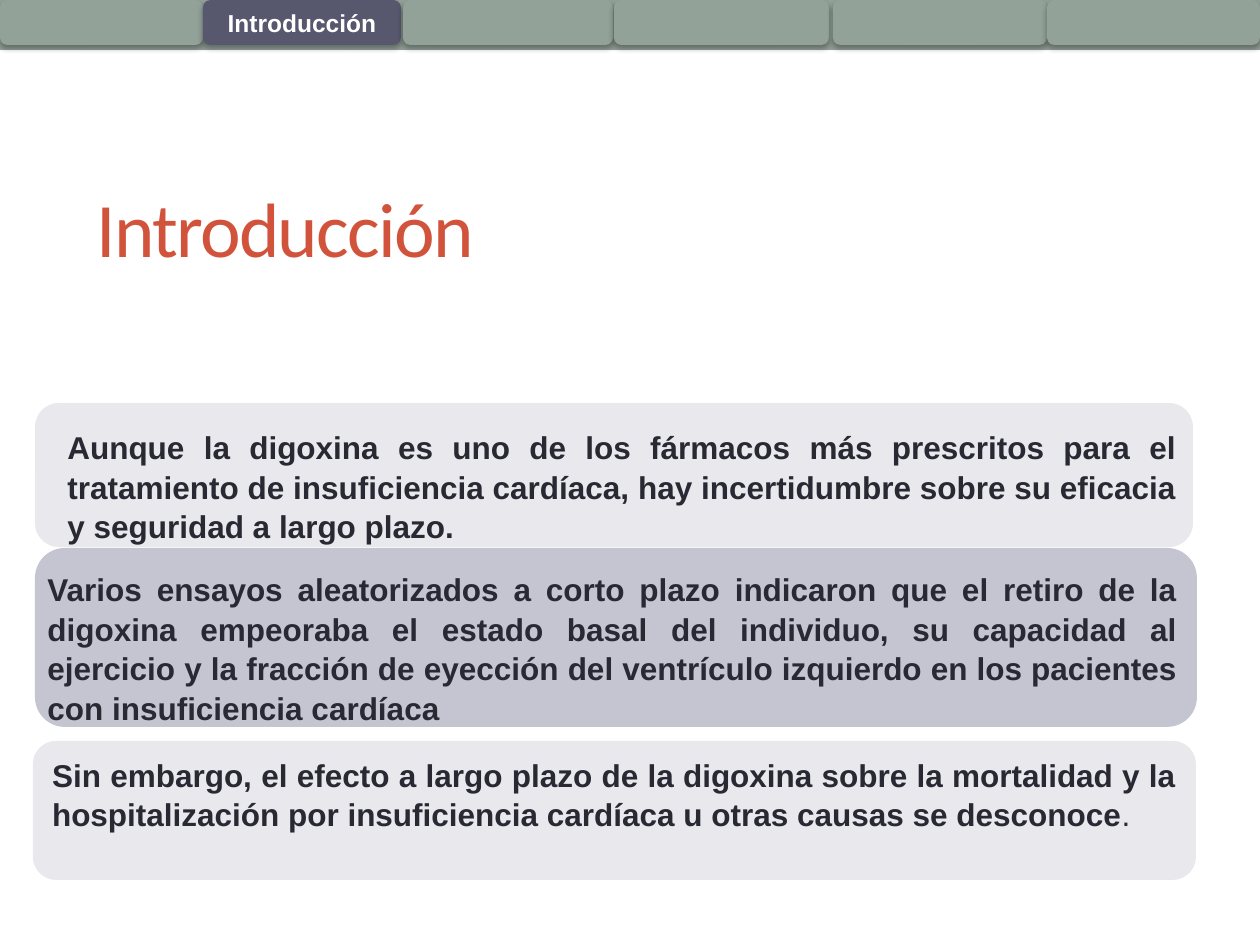
"""Build the introduction slide: a tab bar, a title and three statement cards."""
from lxml.etree import SubElement
from pptx import Presentation
from pptx.dml.color import RGBColor
from pptx.enum.shapes import MSO_SHAPE as SHAPE
from pptx.enum.text import MSO_ANCHOR as ANCHOR, PP_ALIGN as ALIGN
from pptx.oxml.ns import qn
from pptx.util import Emu, Pt

PX = 914400 // 126
WIDTH, HEIGHT = 1260, 945
SAGE, SLATE, LILAC, MIST = "93A299", "57576E", "C5C5D1", "E8E8ED"
INK, CORAL, WHITE = "292934", "D2533C", "FFFFFF"

HEADING = "Introducción"
TITLE_BOX = (84, 159, 577, 136)
BAND_HEIGHT, TAB_HEIGHT = 50, 45
TABS = [
    (0, 203, ""),
    (203, 198, HEADING),
    (403, 210, ""),
    (614, 215, ""),
    (833, 214, ""),
    (1047, 213, ""),
]
CARDS = [
    {"box": (35, 403, 1158, 144), "fill": MIST, "text_box": (55, 420, 1134, 127),
     "runs": [("Aunque la digoxina es uno de los fármacos más prescritos para el "
               "tratamiento de insuficiencia cardíaca, hay incertidumbre sobre su "
               "eficacia y seguridad a largo plazo.", True)]},
    {"box": (35, 548, 1162, 179), "fill": LILAC, "text_box": (35, 562, 1155, 165),
     "runs": [("Varios ensayos aleatorizados a corto plazo indicaron que el retiro "
               "de la digoxina empeoraba el estado basal del individuo, su capacidad "
               "al ejercicio y la fracción de eyección del ventrículo izquierdo en "
               "los pacientes con insuficiencia cardíaca", True)]},
    {"box": (33, 741, 1163, 139), "fill": MIST, "text_box": None,
     "runs": [("Sin embargo, el efecto a largo plazo de la digoxina sobre la "
               "mortalidad y la hospitalización por insuficiencia cardíaca u otras "
               "causas se desconoce", True), (".", False)]},
]


def rgb(value):
    return RGBColor.from_string(value)


def emu(box):
    return [Emu(length * PX) for length in box]


def add_panel(slide, kind, box, fill):
    panel = slide.shapes.add_shape(kind, *emu(box))
    panel.shadow.inherit = False
    panel.fill.solid()
    panel.fill.fore_color.rgb = rgb(fill)
    panel.line.fill.background()
    return panel


def add_shadow(panel):
    effects = panel.element.spPr.find(qn("a:effectLst"))
    shadow = SubElement(effects, qn("a:outerShdw"), blurRad=str(Pt(3.5)),
                        dist=str(Pt(2.2)), dir="5400000", rotWithShape="0")
    black = SubElement(shadow, qn("a:srgbClr"), val="000000")
    SubElement(black, qn("a:alpha"), val="32000")


def write(frame, runs, size, color, align, anchor, font="Arial", spacing=None):
    frame.word_wrap = True
    frame.vertical_anchor = anchor
    paragraph = frame.paragraphs[0]
    paragraph.alignment = align
    paragraph.line_spacing = spacing
    for words, bold in runs:
        run = paragraph.add_run()
        run.text = words
        run.font.name = font
        run.font.size = Pt(size)
        run.font.bold = bold
        run.font.color.rgb = rgb(color)
    return paragraph


def main():
    deck = Presentation()
    deck.slide_width, deck.slide_height = emu((WIDTH, HEIGHT))
    slide = deck.slides.add_slide(deck.slide_layouts[5])

    title = slide.shapes.title
    title.left, title.top, title.width, title.height = emu(TITLE_BOX)
    heading = write(title.text_frame, [(HEADING, False)], 44, CORAL,
                    ALIGN.LEFT, ANCHOR.MIDDLE, "Calibri")
    heading.runs[0].font._element.set("spc", "-100")

    add_panel(slide, SHAPE.RECTANGLE, (0, 0, WIDTH, BAND_HEIGHT), SAGE)
    for left, width, label in TABS:
        tab = add_panel(slide, SHAPE.ROUNDED_RECTANGLE,
                        (left, 0, width, TAB_HEIGHT), SLATE if label else SAGE)
        add_shadow(tab)
        if label:
            write(tab.text_frame, [(label, True)], 14, WHITE,
                  ALIGN.CENTER, ANCHOR.MIDDLE)

    for card in CARDS:
        holder = add_panel(slide, SHAPE.ROUNDED_RECTANGLE, card["box"], card["fill"])
        if card["text_box"]:
            holder = slide.shapes.add_textbox(*emu(card["text_box"]))
        write(holder.text_frame, card["runs"], 18, INK,
              ALIGN.JUSTIFY, ANCHOR.TOP, spacing=1.05)

    deck.save("out.pptx")


if __name__ == "__main__":
    main()
